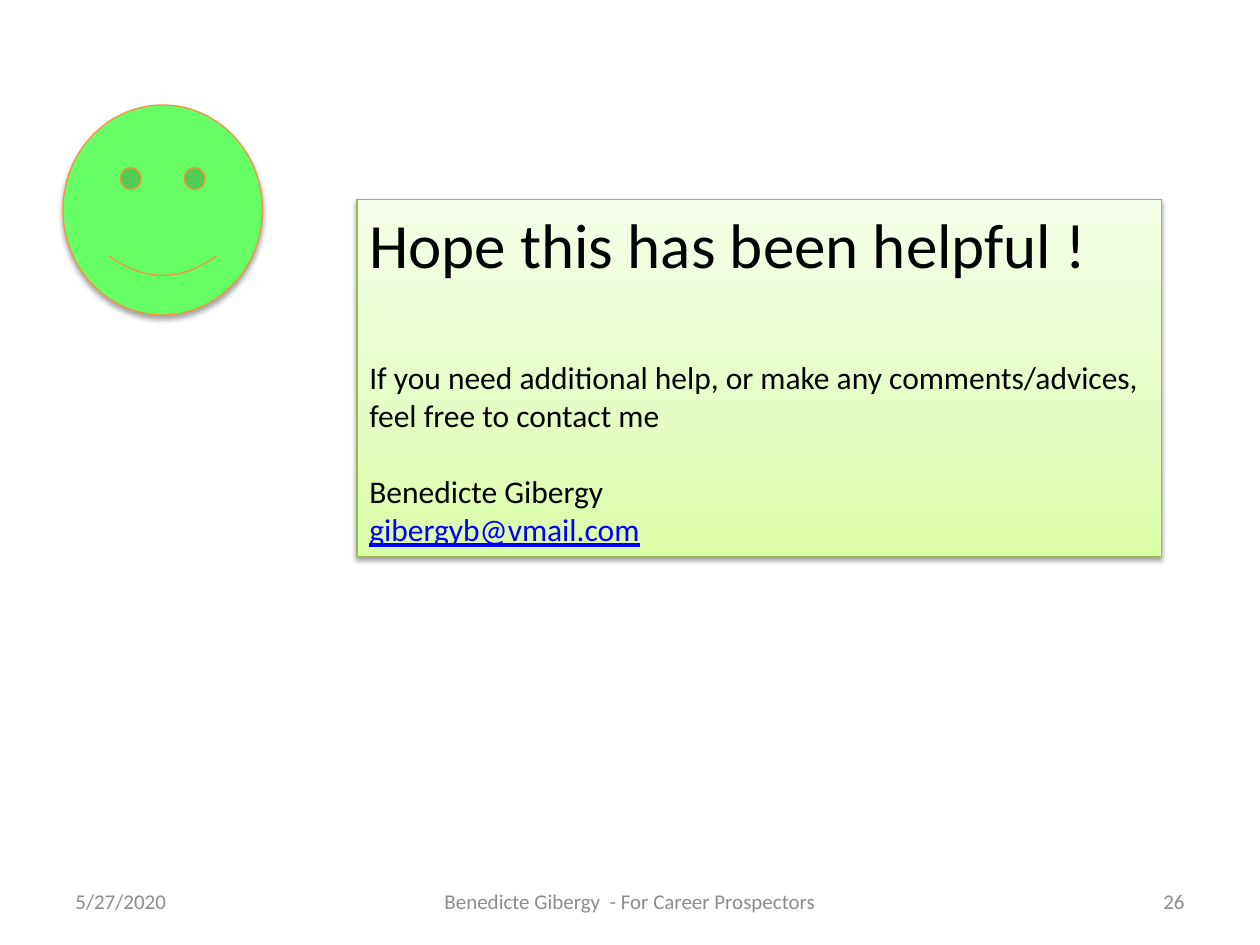
from copy import deepcopy
from dataclasses import dataclass

from lxml.etree import SubElement
from pptx import Presentation
from pptx.dml.color import RGBColor
from pptx.enum.shapes import MSO_SHAPE as Preset
from pptx.enum.text import MSO_ANCHOR as Anchor, MSO_AUTO_SIZE as AutoSize, PP_ALIGN as Align
from pptx.oxml.ns import qn
from pptx.util import Inches, Pt

WIDTH, HEIGHT = 10, 7.5
COLS, ROWS = 120, 90  # grid of twelfths of an inch
FONT = "Calibri"
BLACK, GREY, LINK_BLUE = "000000", "8C8C8C", "0000FF"
BLANK_LINE = 22  # points taken by one 18 pt line


@dataclass
class Box:
    """A place on the slide, in grid columns and rows."""
    col: float
    row: float
    cols: float
    rows: float

    def emu(self) -> tuple:
        across, down = WIDTH / COLS, HEIGHT / ROWS
        return (Inches(self.col * across), Inches(self.row * down),
                Inches(self.cols * across), Inches(self.rows * down))


@dataclass
class Line:
    text: str
    size: float = 18
    color: str = BLACK
    align: Align = Align.LEFT
    before: float = 0
    underline: bool = False


@dataclass
class Footer:
    box: Box
    text: str
    align: Align


def rgb(color: str) -> RGBColor:
    return RGBColor.from_string(color)


def write_lines(frame, lines: list[Line]) -> None:
    for i, line in enumerate(lines):
        para = frame.paragraphs[0] if i == 0 else frame.add_paragraph()
        para.alignment = line.align
        para.space_before = Pt(line.before)
        run = para.add_run()
        run.text = line.text
        run.font.name = FONT
        run.font.size = Pt(line.size)
        run.font.color.rgb = rgb(line.color)
        if line.underline:
            run.font.underline = True


def fill_gradient(shape, stops: list[tuple[int, str]], angle: float) -> None:
    shape.fill.gradient()
    shape.fill.gradient_angle = angle
    stop_list = shape.fill.gradient_stops
    first = shape._element.spPr.find(".//" + qn("a:gs"))
    parent = first.getparent()
    for _ in range(len(stops) - len(stop_list)):
        parent.append(deepcopy(first))
    for stop, (percent, color) in zip(shape.fill.gradient_stops, stops):
        stop.color.rgb = rgb(color)
        stop.position = percent / 100


def add_preset(slide, preset: Preset, box: Box, outline: str, drop: float, opacity: int):
    """Add an outlined shape with a soft shadow falling straight down."""
    shape = slide.shapes.add_shape(preset, *box.emu())
    shape.line.color.rgb = rgb(outline)
    shape.line.width = Pt(0.75)
    shape.shadow.inherit = False
    effects = shape._element.spPr.find(qn("a:effectLst"))
    shadow = SubElement(effects, qn("a:outerShdw"), blurRad=str(Pt(3.1)),
                        dist=str(Pt(drop)), dir=str(90 * 60000), rotWithShape="0")
    tint = SubElement(shadow, qn("a:srgbClr"), val=BLACK)
    SubElement(tint, qn("a:alpha"), val=str(opacity * 1000))
    return shape


def add_footer(slide, footer: Footer) -> None:
    frame = slide.shapes.add_textbox(*footer.box.emu()).text_frame
    frame.word_wrap = True
    frame.vertical_anchor = Anchor.MIDDLE
    write_lines(frame, [Line(footer.text, 12, GREY, footer.align)])


MESSAGE = [
    Line("Hope this has been helpful !", size=36),
    Line("If you need additional help, or make any comments/advices,", before=2 * BLANK_LINE),
    Line("feel free to contact me"),
    Line("Benedicte Gibergy", before=BLANK_LINE),
    Line("gibergyb@vmail.com", color=LINK_BLUE, underline=True),
]

FOOTERS = [
    Footer(Box(6, 83.4, 28, 4.8), "5/27/2020", Align.LEFT),
    Footer(Box(86, 83.4, 28, 4.8), "26", Align.RIGHT),
    Footer(Box(41, 83.4, 38, 4.8), "Benedicte Gibergy  - For Career Prospectors", Align.CENTER),
]


def main() -> None:
    deck = Presentation()
    deck.slide_width, deck.slide_height = Inches(WIDTH), Inches(HEIGHT)
    slide = deck.slides.add_slide(deck.slide_layouts[6])

    # Smiley
    smiley = add_preset(slide, Preset.SMILEY_FACE, Box(6, 10, 19, 20), "F69240", 1.8, 35)
    smiley.fill.solid()
    smiley.fill.fore_color.rgb = rgb("66FF66")

    # Closing message
    card = add_preset(slide, Preset.RECTANGLE, Box(34, 19, 76.6, 34), "98B955", 1.6, 38)
    fill_gradient(card, [(0, "DAFDA7"), (35, "E4FCC2"), (100, "F5FFE7")], 90)
    frame = card.text_frame
    frame.word_wrap = False
    frame.auto_size = AutoSize.SHAPE_TO_FIT_TEXT
    frame.vertical_anchor = Anchor.TOP
    write_lines(frame, MESSAGE)

    # Date, page number and title at the foot
    for footer in FOOTERS:
        add_footer(slide, footer)

    deck.save("out.pptx")


if __name__ == "__main__":
    main()
